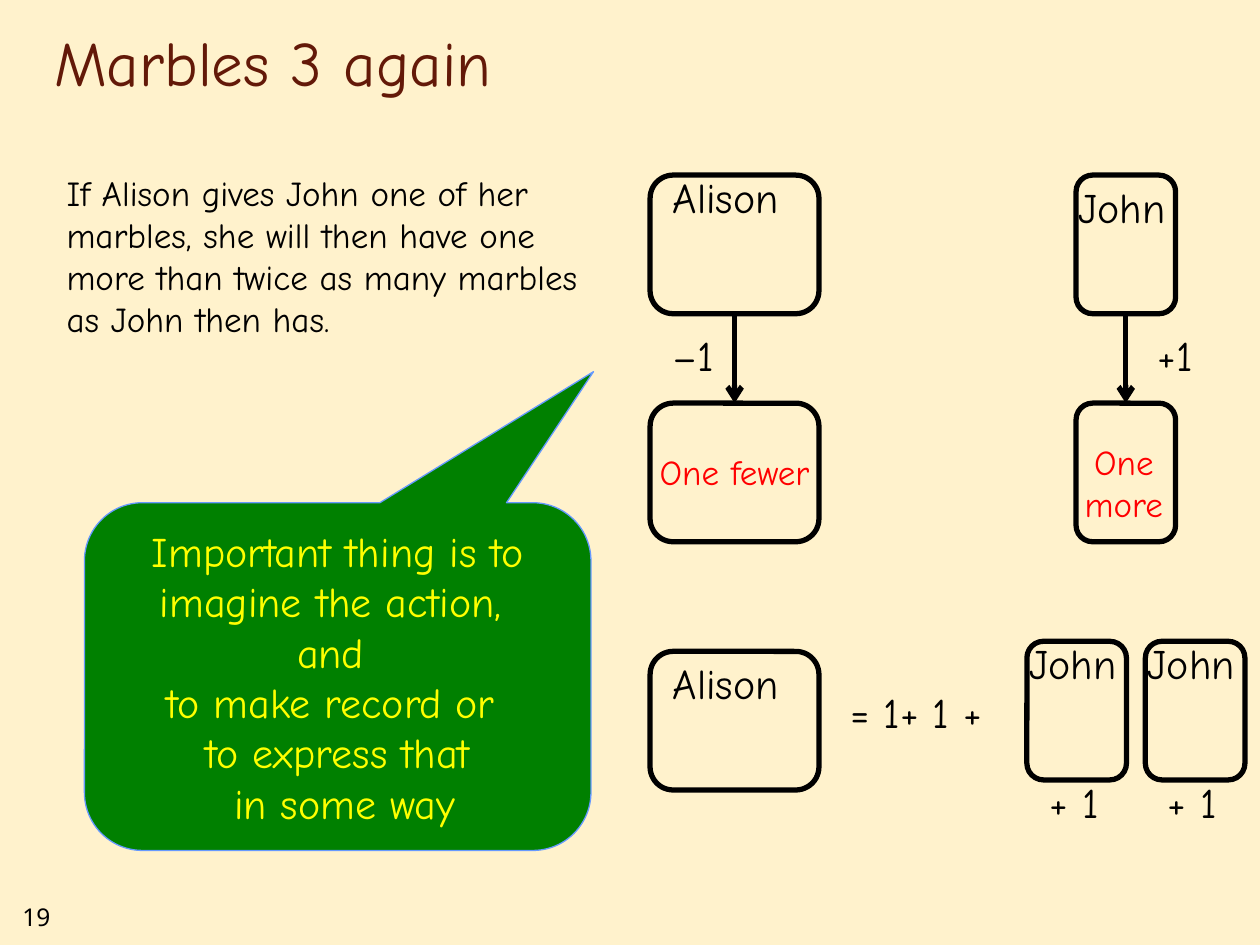
from lxml import etree
from pptx import Presentation
from pptx.dml.color import RGBColor
from pptx.enum.shapes import MSO_CONNECTOR, MSO_SHAPE
from pptx.enum.text import MSO_ANCHOR, MSO_AUTO_SIZE, PP_ALIGN
from pptx.oxml.ns import qn
from pptx.util import Inches, Pt

LEFT, CENTER = PP_ALIGN.LEFT, PP_ALIGN.CENTER
MIDDLE, BOTTOM = MSO_ANCHOR.MIDDLE, MSO_ANCHOR.BOTTOM
ROUNDED_BOX = MSO_SHAPE.ROUNDED_RECTANGLE
CALLOUT = MSO_SHAPE.ROUNDED_RECTANGULAR_CALLOUT
STRAIGHT = MSO_CONNECTOR.STRAIGHT
FIT_SHAPE, NO_FIT = MSO_AUTO_SIZE.SHAPE_TO_FIT_TEXT, MSO_AUTO_SIZE.NONE

FONT, NUMBER_FONT = "Comic Neue", "Noto Sans"
CREAM, BROWN, BLACK, RED = "FFF2CC", "631908", "000000", "FF0000"
GREEN, YELLOW, BLUE = "008000", "FFFF00", "6699FF"

ALISON_LEFT, ALISON_WIDTH = 5.16, 1.34
JOHN_LEFT, JOHN_WIDTH = 8.54, 0.79
JOHN_SUM_LEFTS = (8.15, 9.09)
BOX_HEIGHT = 1.1
BEFORE_TOP, AFTER_TOP = 1.39, 3.2


def color(hex_value):
    return RGBColor.from_string(hex_value)


def format_text(text_frame, size, text_color, align=LEFT, font=FONT):
    for paragraph in text_frame.paragraphs:
        paragraph.alignment = align
        paragraph.font.name = font
        paragraph.font.size = Pt(size)
        paragraph.font.color.rgb = color(text_color)


def set_line(shape, line_color, width):
    shape.line.color.rgb = color(line_color)
    shape.line.width = Pt(width)


def add_title(slide, text):
    title = slide.shapes.title
    title.left, title.top = Inches(0.33), Inches(0.17)
    title.width, title.height = Inches(8.5), Inches(0.67)
    text_frame = title.text_frame
    text_frame.text = text
    text_frame.auto_size = NO_FIT
    text_frame.vertical_anchor = BOTTOM
    format_text(text_frame, 36, BROWN)


def add_text(slide, text, left, top, width=0.79, height=0.5, size=24,
             text_color=BLACK, align=LEFT, font=FONT):
    box = slide.shapes.add_textbox(Inches(left), Inches(top), Inches(width), Inches(height))
    text_frame = box.text_frame
    text_frame.word_wrap = True
    text_frame.auto_size = FIT_SHAPE
    text_frame.text = text
    format_text(text_frame, size, text_color, align, font)


def add_box(slide, left, top, width):
    box = slide.shapes.add_shape(ROUNDED_BOX, Inches(left), Inches(top),
                                 Inches(width), Inches(BOX_HEIGHT))
    box.shadow.inherit = False
    box.fill.background()
    set_line(box, BLACK, 3)


def add_down_arrow(slide, x):
    """Join a box in the first row to the box below it."""
    arrow = slide.shapes.add_connector(STRAIGHT, Inches(x), Inches(BEFORE_TOP + BOX_HEIGHT),
                                       Inches(x), Inches(AFTER_TOP))
    set_line(arrow, BLACK, 3)
    line = arrow.line._get_or_add_ln()
    etree.SubElement(line, qn("a:tailEnd"), type="arrow")
    etree.SubElement(arrow._element.spPr, qn("a:effectLst"))


def add_callout(slide, text):
    callout = slide.shapes.add_shape(CALLOUT, Inches(0.67), Inches(3.99),
                                     Inches(4.02), Inches(2.76))
    callout.shadow.inherit = False
    for index, value in enumerate((0.505, -0.877, 0.167)):
        callout.adjustments[index] = value
    callout.fill.solid()
    callout.fill.fore_color.rgb = color(GREEN)
    set_line(callout, BLUE, 0.75)
    text_frame = callout.text_frame
    text_frame.word_wrap = True
    text_frame.vertical_anchor = MIDDLE
    text_frame.text = text
    format_text(text_frame, 24, YELLOW, CENTER)


def add_transfer(slide):
    """Show both children's marbles before and after the gift."""
    for top in (BEFORE_TOP, AFTER_TOP):
        add_box(slide, ALISON_LEFT, top, ALISON_WIDTH)
        add_box(slide, JOHN_LEFT, top, JOHN_WIDTH)
    add_down_arrow(slide, ALISON_LEFT + ALISON_WIDTH / 2)
    add_down_arrow(slide, JOHN_LEFT + JOHN_WIDTH / 2)
    add_text(slide, "Alison", 5.24, 1.31, 1.65)
    add_text(slide, "John", 8.46, 1.39, 1.65)
    add_text(slide, "–1", 5.24, 2.57)
    add_text(slide, "+1", 9.09, 2.57)
    add_text(slide, "One fewer", 5.08, 3.53, 1.5, 0.77, 20, RED, CENTER)
    add_text(slide, "One more", 8.27, 3.45, 1.3, 0.77, 20, RED, CENTER)


def add_equation(slide):
    add_box(slide, ALISON_LEFT, 5.17, ALISON_WIDTH)
    add_text(slide, "Alison", 5.24, 5.17, 1.65)
    add_text(slide, "= 1+ 1 +", 6.65, 5.4, 1.5)
    for left in JOHN_SUM_LEFTS:
        add_box(slide, left, 5.09, JOHN_WIDTH)
        add_text(slide, "John", left - 0.08, 5.01, 1.65)
        add_text(slide, "+ 1", left + 0.08, 6.11)


def main():
    presentation = Presentation()
    presentation.slide_width, presentation.slide_height = Inches(10), Inches(7.5)
    slide = presentation.slides.add_slide(presentation.slide_layouts[5])
    slide.background.fill.solid()
    slide.background.fill.fore_color.rgb = color(CREAM)

    add_title(slide, "Marbles 3 again")
    add_text(slide, "If Alison gives John one of her marbles, she will then have one "
             "more than twice as many marbles as John then has.",
             0.43, 1.31, 4.33, 1.45, 20)
    add_transfer(slide)
    add_callout(slide, "Important thing is to imagine the action, \vand \v"
                "to make record or \vto express that\v in some way")
    add_equation(slide)
    add_text(slide, "19", 0.08, 7.11, 0.75, 0.34, 14, font=NUMBER_FONT)
    presentation.save("out.pptx")


if __name__ == "__main__":
    main()
